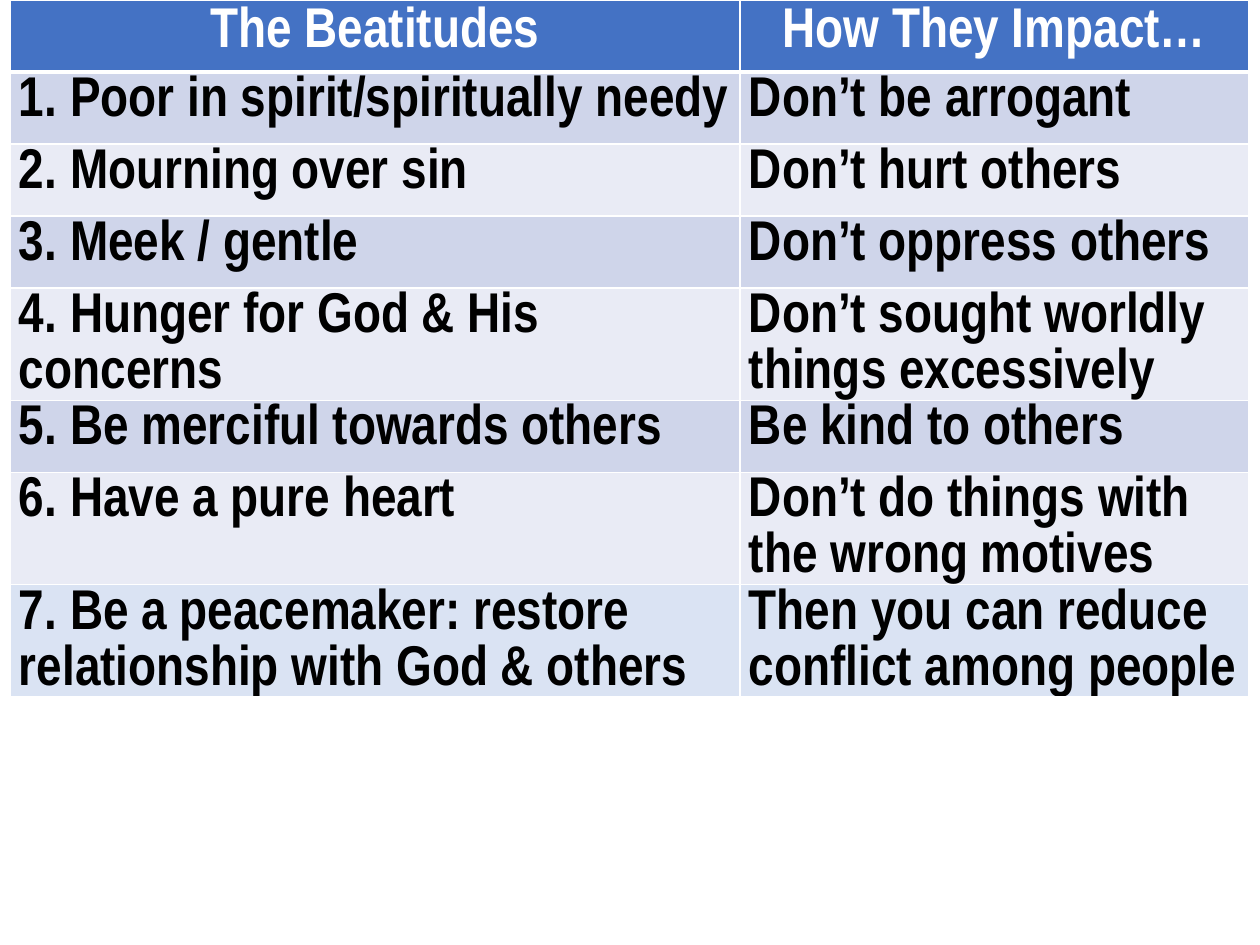
"""Build a slide with a table of the Beatitudes and their impact."""
from dataclasses import dataclass

from pptx import Presentation
from pptx import util as u
from pptx.dml.color import RGBColor
from pptx.enum import text
from pptx.oxml import parse_xml
from pptx.oxml.ns import nsdecls

HEADINGS = ("The Beatitudes", "How They Impact…")
BEATITUDES = [
    ("1. Poor in spirit/spiritually needy", "Don’t be arrogant"),
    ("2. Mourning over sin", "Don’t hurt others"),
    ("3. Meek / gentle", "Don’t oppress others"),
    ("4. Hunger for God & His concerns", "Don’t sought worldly things excessively"),
    ("5. Be merciful towards others", "Be kind to others"),
    ("6. Have a pure heart", "Don’t do things with the wrong motives"),
    ("7. Be a peacemaker: restore relationship with God & others",
     "Then you can reduce conflict among people"),
]
SLIDE = (1260, 945)
LEFT, TOP = 10, 0
COLUMNS = (730, 509)
ROW = 72


@dataclass(frozen=True)
class Theme:
    font: str = "Arial Narrow"
    size: int = 32
    header: str = "4472C4"
    bands: tuple = ("CFD5EA", "E9EBF5")
    closing: str = "DAE3F3"
    light: str = "FFFFFF"
    dark: str = "000000"
    rule: int = 1
    heavy_rule: int = 3


THEME = Theme()


def px(length):
    return u.Emu(round(length * 914400 / 126))


def apply(target, values):
    for name, value in values.items():
        setattr(target, name, value)


def add_borders(cell, top, bottom):
    widths = {"lnL": THEME.rule, "lnR": THEME.rule, "lnT": top, "lnB": bottom}
    for side, width in widths.items():
        cell._tc.get_or_add_tcPr().append(parse_xml(
            f'<a:{side} {nsdecls("a")} w="{u.Pt(width)}"><a:solidFill>'
            f'<a:srgbClr val="{THEME.light}"/></a:solidFill></a:{side}>'))


def row_fill(row):
    if row == 0:
        return THEME.header
    if row == len(BEATITUDES):
        return THEME.closing
    return THEME.bands[(row - 1) % 2]


def fill_cell(cell, row, words):
    is_header = row == 0
    add_borders(cell,
                THEME.heavy_rule if row == 1 else THEME.rule,
                THEME.heavy_rule if is_header else THEME.rule)
    cell.fill.solid()
    cell.fill.fore_color.rgb = RGBColor.from_string(row_fill(row))
    cell.text = words
    paragraph = cell.text_frame.paragraphs[0]
    if is_header:
        paragraph.alignment = text.PP_ALIGN.CENTER
    else:
        apply(cell, {"margin_left": px(9), "margin_right": px(9),
                     "margin_top": 0, "margin_bottom": 0})
        paragraph.line_spacing = 1.07
    font = paragraph.runs[0].font
    apply(font, {"name": THEME.font, "size": u.Pt(THEME.size), "bold": True})
    font.color.rgb = RGBColor.from_string(THEME.light if is_header else THEME.dark)


def main():
    deck = Presentation()
    apply(deck, {"slide_width": px(SLIDE[0]), "slide_height": px(SLIDE[1])})
    slide = deck.slides.add_slide(deck.slide_layouts[6])
    rows = [HEADINGS, *BEATITUDES]
    table = slide.shapes.add_table(
        len(rows), len(COLUMNS), px(LEFT), px(TOP),
        px(sum(COLUMNS)), px(ROW * len(rows))).table
    for column, width in zip(table.columns, COLUMNS):
        column.width = px(width)
    for row, entries in enumerate(rows):
        table.rows[row].height = px(ROW)
        for column, words in enumerate(entries):
            fill_cell(table.cell(row, column), row, words)
    deck.save("out.pptx")


if __name__ == "__main__":
    main()
